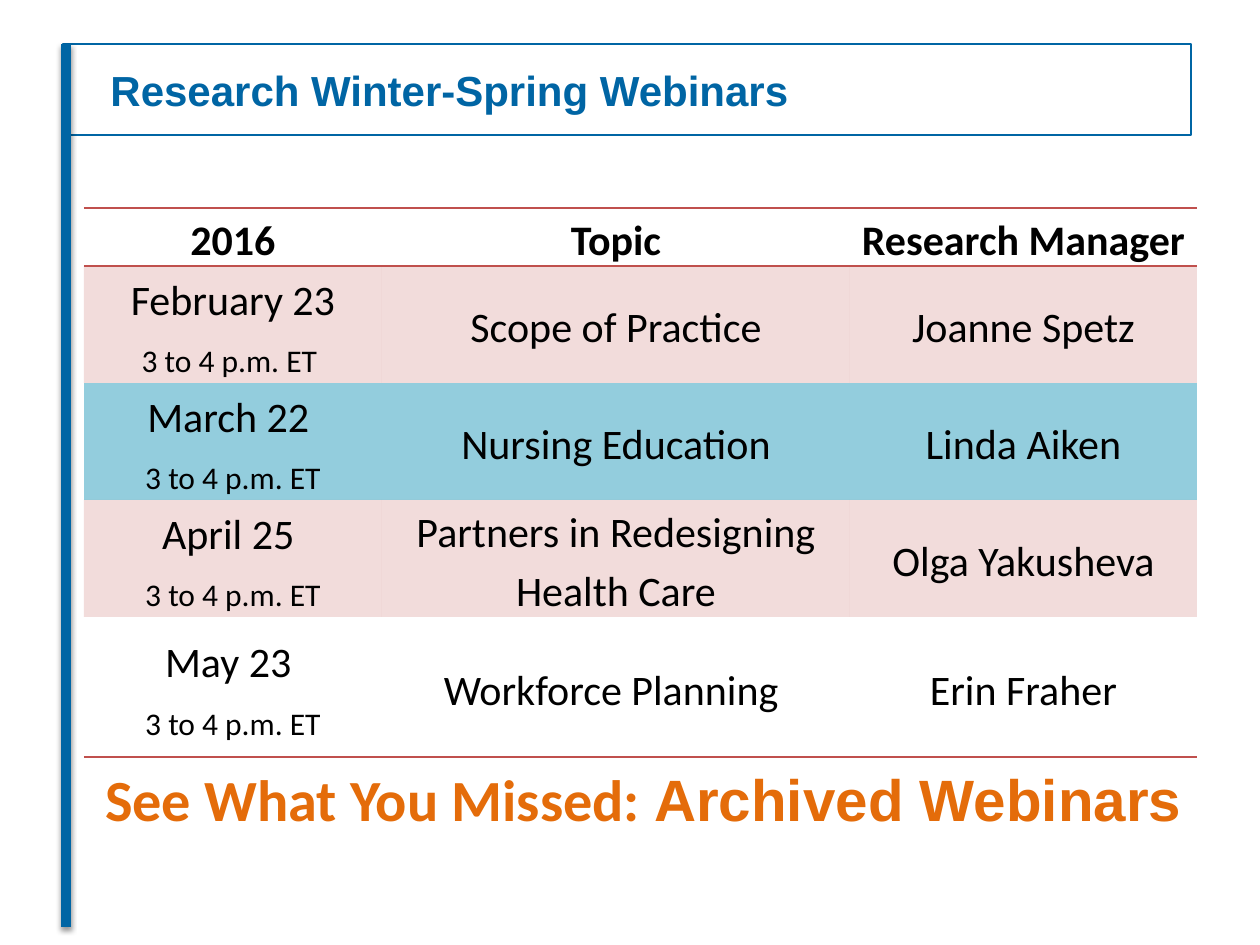
from dataclasses import dataclass

from lxml.etree import SubElement, fromstring
from pptx import Presentation
from pptx.dml.color import RGBColor
from pptx.enum.shapes import MSO_CONNECTOR as Connector, MSO_SHAPE as Shape
from pptx.enum.text import MSO_ANCHOR as Anchor, PP_ALIGN as Align
from pptx.oxml.ns import nsdecls, qn
from pptx.util import Emu, Pt

SCALE = 914400 / 126
NO_TABLE_STYLE = "{2D5ABB26-0587-4C30-8999-92F81FD0307C}"


def px(length):
    return Emu(round(length * SCALE))


def assign(target, values):
    for name, value in values.items():
        setattr(target, name, value)


@dataclass(frozen=True)
class Theme:
    blue: str = "0065A4"
    red: str = "C0504D"
    aqua: str = "93CDDD"
    orange: str = "E46C0A"
    black: str = "000000"
    heading: str = "Arial"
    body: str = "Calibri"
    large: float = 24
    small: float = 18
    callout: float = 33.3


class SlideWriter:
    def __init__(self, page, theme):
        self.page = page
        self.theme = theme

    def span(self, para, text, size, color, face, bold=False):
        span = para.add_run()
        span.text = text
        assign(span.font, {"size": Pt(size), "name": face, "bold": bold})
        span.font.color.rgb = RGBColor.from_string(color)

    def frame(self, left, top, width, height, color, weight):
        frame = self.page.shapes.add_shape(
            Shape.RECTANGLE, px(left), px(top), px(width), px(height))
        frame.shadow.inherit = False
        frame.fill.background()
        frame.line.color.rgb = RGBColor.from_string(color)
        frame.line.width = Pt(weight)

    def rule(self, left, top, bottom, color, weight):
        rule = self.page.shapes.add_connector(
            Connector.STRAIGHT, px(left), px(top), px(left), px(bottom))
        rule.line.color.rgb = RGBColor.from_string(color)
        rule.line.width = Pt(weight)
        rule._element.spPr.append(fromstring(
            f'<a:effectLst {nsdecls("a")}>'
            f'<a:outerShdw blurRad="{Pt(3.1)}" dist="{Pt(1.6)}" dir="5400000" rotWithShape="0">'
            f'<a:srgbClr val="{self.theme.black}"><a:alpha val="38000"/></a:srgbClr>'
            '</a:outerShdw></a:effectLst>'))

    def text(self, left, top, width, height, spans, align, anchor):
        box = self.page.shapes.add_textbox(px(left), px(top), px(width), px(height))
        assign(box.text_frame, {"word_wrap": True, "vertical_anchor": anchor})
        para = box.text_frame.paragraphs[0]
        para.alignment = align
        for span in spans:
            self.span(para, *span)

    def border(self, cell, side, color):
        line = fromstring(
            f'<a:{side} {nsdecls("a")} w="{Pt(1)}"><a:solidFill>'
            f'<a:srgbClr val="{color}"/></a:solidFill></a:{side}>')
        cell._tc.get_or_add_tcPr().append(line)

    def fill(self, cell, color, opacity):
        if color is None:
            cell.fill.background()
            return
        cell.fill.solid()
        cell.fill.fore_color.rgb = RGBColor.from_string(color)
        if opacity < 100:
            tint = cell._tc.tcPr.find(qn("a:solidFill"))[0]
            SubElement(tint, qn("a:alpha")).set("val", str(opacity * 1000))

    def cell(self, cell, lines, bold, anchor):
        assign(cell, {"margin_left": px(9), "margin_right": px(9), "margin_top": 0,
                      "margin_bottom": 0, "vertical_anchor": anchor})
        for index, (text, size) in enumerate(lines):
            para = cell.text_frame.add_paragraph() if index else cell.text_frame.paragraphs[0]
            assign(para, {"alignment": Align.CENTER, "line_spacing": 1.15,
                          "space_before": Pt(6 if index else 0)})
            self.span(para, text, size, self.theme.black, self.theme.body, bold)

    def table(self, left, top, widths, heights, rows, fills):
        table = self.page.shapes.add_table(
            len(rows), len(widths), px(left), px(top), px(sum(widths)), px(sum(heights))).table
        assign(table, {"first_row": False, "horz_banding": False})
        table._tbl.tblPr.find(qn("a:tableStyleId")).text = NO_TABLE_STYLE
        for column, width in zip(table.columns, widths):
            column.width = px(width)
        for index, (row, height) in enumerate(zip(rows, heights)):
            table.rows[index].height = px(height)
            header = index == 0
            sides = ["lnT", "lnB"] if header else ["lnB"] if index == len(rows) - 1 else []
            for cell, lines in zip(table.rows[index].cells, row):
                for side in sides:
                    self.border(cell, side, self.theme.red)
                self.fill(cell, *fills[index])
                self.cell(cell, lines, header, Anchor.TOP if header else Anchor.MIDDLE)


def main():
    deck = Presentation()
    assign(deck, {"slide_width": px(1260), "slide_height": px(945)})
    theme = Theme()
    writer = SlideWriter(deck.slides.add_slide(deck.slide_layouts[6]), theme)

    writer.frame(63, 44, 1128, 91, theme.blue, 0.75)
    writer.rule(66, 44, 927, theme.blue, 6)
    writer.text(98, 44, 1093, 91,
                [("Research Winter-Spring Webinars", theme.large, theme.blue, theme.heading, True)],
                Align.LEFT, Anchor.MIDDLE)

    webinars = [
        ("February 23", "3 to 4 p.m. ET ", "Scope of Practice", "Joanne Spetz"),
        ("March 22 ", "3 to 4 p.m. ET", "Nursing Education", "Linda Aiken"),
        ("April 25 ", "3 to 4 p.m. ET", "Partners in Redesigning Health Care", "Olga Yakusheva"),
        ("May 23 ", "3 to 4 p.m. ET", "Workforce Planning ", "Erin Fraher"),
    ]
    rows = [[[(title, theme.large)] for title in ("2016", "Topic", "Research Manager")]]
    for date, time, topic, manager in webinars:
        rows.append([[(date, theme.large), (time, theme.small)],
                     [(topic, theme.large)], [(manager, theme.large)]])
    plain, pink, aqua = (None, 100), (theme.red, 20), (theme.aqua, 100)
    writer.table(84, 208, [298, 468, 347], [57, 117, 117, 117, 140], rows,
                 [plain, pink, aqua, pink, plain])

    writer.text(87, 757, 1113, 110,
                [("See What You Missed: ", theme.callout, theme.orange, theme.body, True),
                 ("Archived Webinars", theme.callout, theme.orange, theme.heading, True)],
                Align.CENTER, Anchor.TOP)
    deck.save("out.pptx")


if __name__ == "__main__":
    main()
